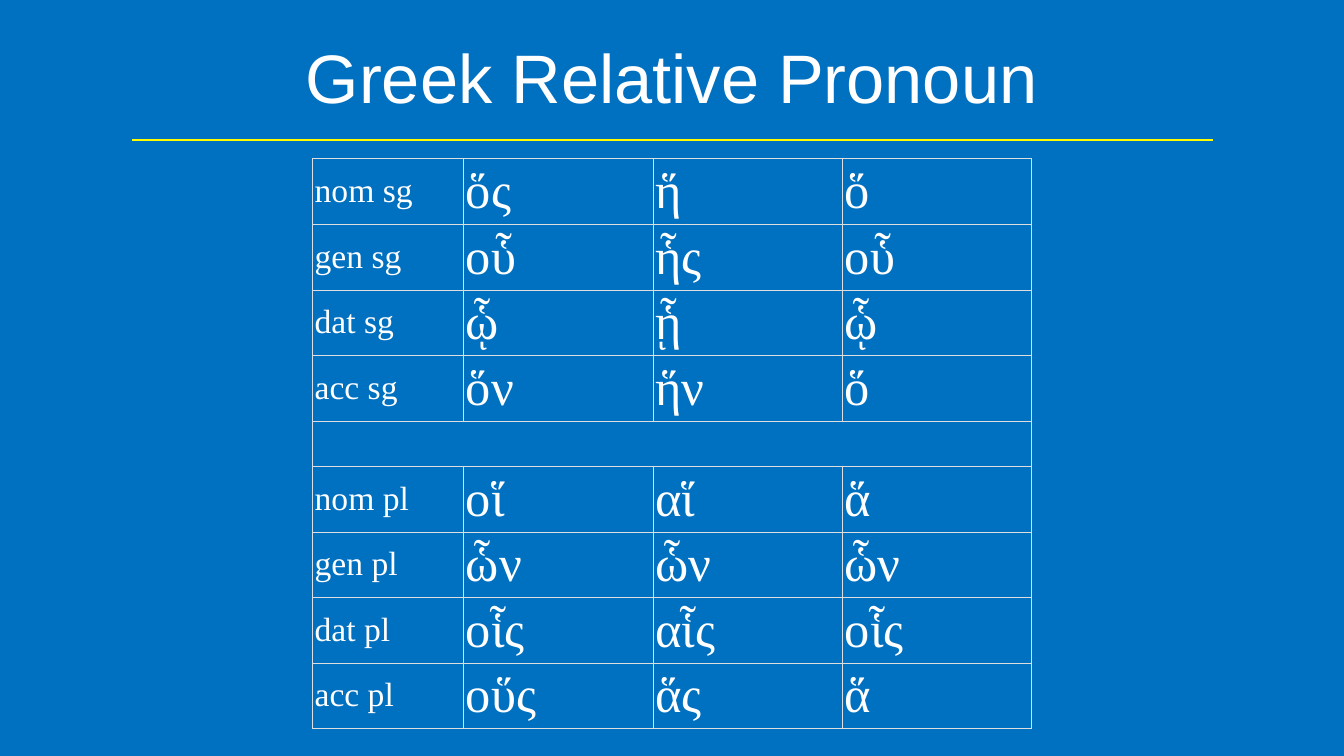
from lxml import etree
from pptx import Presentation
from pptx.dml.color import RGBColor
from pptx.enum.shapes import MSO_CONNECTOR
from pptx.enum.text import MSO_ANCHOR, PP_ALIGN
from pptx.oxml.ns import qn
from pptx.util import Inches, Pt

LEFT, CENTER = PP_ALIGN.LEFT, PP_ALIGN.CENTER
MIDDLE = MSO_ANCHOR.MIDDLE
STRAIGHT = MSO_CONNECTOR.STRAIGHT

W, H = 26.67, 15
COLORS = {"background": "0070C0", "text": "FFFFFF", "rule": "FFFB00", "border": "DCDEE0"}
TITLE_FONT, TABLE_FONT = "Arial", "Times New Roman"

# Case label, then masculine, feminine and neuter; None is the gap row
FORMS = [
    ("nom sg", "ὅς", "ἥ", "ὅ"),
    ("gen sg", "οὗ", "ἧς", "οὗ"),
    ("dat sg", "ᾧ", "ᾗ", "ᾧ"),
    ("acc sg", "ὅν", "ἥν", "ὅ"),
    None,
    ("nom pl", "οἵ", "αἵ", "ἅ"),
    ("gen pl", "ὧν", "ὧν", "ὧν"),
    ("dat pl", "οἷς", "αἷς", "οἷς"),
    ("acc pl", "οὕς", "ἅς", "ἅ"),
]
COL_WIDTHS = [3] + [3.76] * 3
ROW_HEIGHT, GAP_HEIGHT = 1.3, 0.9


def rgb(name):
    return RGBColor.from_string(COLORS[name])


def write(tf, text, *, size, font, color="text", align=LEFT):
    p = tf.paragraphs[0]
    p.alignment = align
    r = p.add_run()
    r.text = text
    r.font.size = Pt(size)
    r.font.name = font
    r.font.color.rgb = rgb(color)


def add_title(s, text):
    width, height = 0.9 * W, 0.15 * H
    sp = s.shapes.add_textbox(Inches((W - width) / 2), Inches(0.025 * H),
                              Inches(width), Inches(height))
    tf = sp.text_frame
    tf.word_wrap = True
    tf.vertical_anchor = MIDDLE
    tf.margin_left = tf.margin_right = tf.margin_top = tf.margin_bottom = Inches(0.06)
    write(tf, text, size=98, font=TITLE_FONT, align=CENTER)


def add_rule(s, x1, x2, y):
    line = s.shapes.add_connector(STRAIGHT, Inches(x1), Inches(y), Inches(x2), Inches(y))
    line.line.color.rgb = rgb("rule")
    line.line.width = Pt(2)
    etree.SubElement(line._element.spPr, qn("a:effectLst"))


def set_borders(cell, sides):
    """Draw the sides named by letters of "LRTB" and clear the others."""
    tc_pr = cell._tc.get_or_add_tcPr()
    for i, side in enumerate("LRTB"):
        ln = etree.Element(qn("a:ln" + side), w=str(Pt(1)))
        if side in sides:
            fill = etree.SubElement(ln, qn("a:solidFill"))
            etree.SubElement(fill, qn("a:srgbClr"), val=COLORS["border"])
        else:
            etree.SubElement(ln, qn("a:noFill"))
        tc_pr.insert(i, ln)


def add_forms_table(s, x, y):
    heights = [ROW_HEIGHT if row else GAP_HEIGHT for row in FORMS]
    n_cols = len(COL_WIDTHS)
    table = s.shapes.add_table(len(FORMS), n_cols, Inches(x), Inches(y),
                               Inches(sum(COL_WIDTHS)), Inches(sum(heights))).table
    table.first_row = table.horz_banding = False
    for col, width in zip(table.columns, COL_WIDTHS):
        col.width = Inches(width)
    for i, (forms, height) in enumerate(zip(FORMS, heights)):
        table.rows[i].height = Inches(height)
        for j in range(n_cols):
            cell = table.cell(i, j)
            cell.fill.background()
            cell.vertical_anchor = MIDDLE
            cell.margin_left = cell.margin_right = Inches(0.05)
            cell.margin_top = cell.margin_bottom = Inches(0.05)
            if forms:
                write(cell.text_frame, forms[j], size=72 if j else 48, font=TABLE_FONT)
                set_borders(cell, "LRTB")
            else:
                # The gap row is open between its outer edges
                set_borders(cell, "TB" + "L" * (j == 0) + "R" * (j == n_cols - 1))


def main():
    prs = Presentation()
    prs.slide_width, prs.slide_height = Inches(W), Inches(H)
    s = prs.slides.add_slide(prs.slide_layouts[6])
    s.background.fill.solid()
    s.background.fill.fore_color.rgb = rgb("background")

    # Heading
    add_rule(s, 2.61, 24.07, 2.78)
    add_title(s, "Greek Relative Pronoun")

    # Paradigm, centred on the slide
    add_forms_table(s, (W - sum(COL_WIDTHS)) / 2, 0.21 * H)

    prs.save("out.pptx")


if __name__ == "__main__":
    main()
